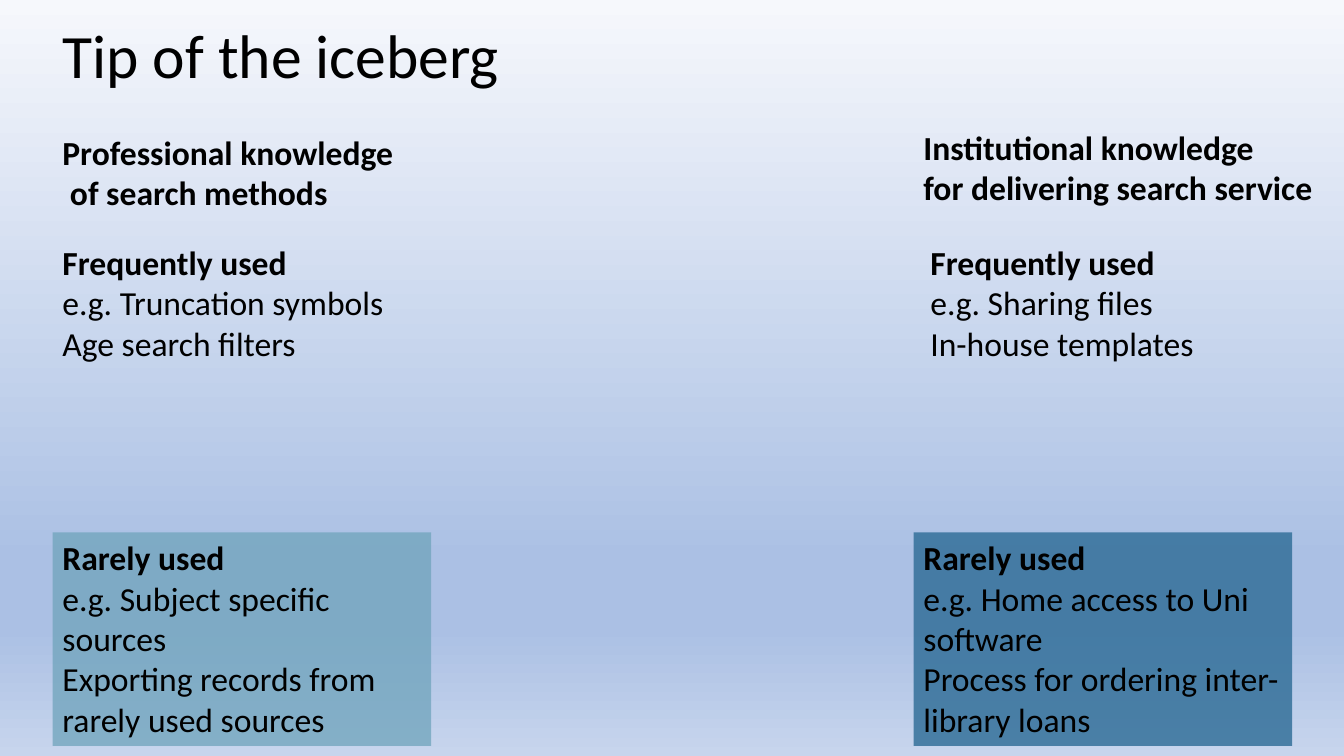
from lxml.etree import SubElement
from pptx import Presentation
from pptx.dml.color import RGBColor
from pptx.enum.shapes import MSO_SHAPE as Shape
from pptx.enum.text import MSO_ANCHOR as Anchor, PP_ALIGN as Align
from pptx.oxml.ns import qn
from pptx.util import Pt

BLACK = RGBColor(0x00, 0x00, 0x00)
TEAL = RGBColor(0x70, 0xA4, 0xBC)
DEEP_BLUE = RGBColor(0x2F, 0x6D, 0x97)
SKY = RGBColor(0xF6, 0xF8, 0xFC)
WATER = RGBColor(0xAB, 0xC0, 0xE4)
SEABED = RGBColor(0xC7, 0xD5, 0xED)

LEFT, RIGHT = 37.5, 652.5
FREQUENT_TOP, RARE_TOP = 169.25, 380.25


class SlideBuilder:
    font = "Calibri"
    title_size = 44
    body_size = 24

    def __init__(self, presentation):
        self.slide = presentation.slides.add_slide(presentation.slide_layouts[5])

    def background(self, stops):
        fill = self.slide.background.fill
        fill.gradient()
        fill.gradient_angle = 270
        stop_list = self.slide.element.find(".//" + qn("a:gsLst"))
        for stop in list(stop_list):
            stop_list.remove(stop)
        for percent, color in stops:
            stop = SubElement(stop_list, qn("a:gs"), pos=str(percent * 1000))
            SubElement(stop, qn("a:srgbClr"), val=str(color))

    def add_text_run(self, paragraph, text, size, bold=False):
        run = paragraph.add_run()
        run.text = text
        run.font.name = self.font
        run.font.size = Pt(size)
        run.font.bold = bold
        run.font.color.rgb = BLACK

    def title(self, text, left, top, width, height):
        shape = self.slide.shapes.title
        shape.left, shape.top = Pt(left), Pt(top)
        shape.width, shape.height = Pt(width), Pt(height)
        shape.text_frame.vertical_anchor = Anchor.MIDDLE
        paragraph = shape.text_frame.paragraphs[0]
        paragraph.alignment = Align.LEFT
        paragraph.line_spacing = 0.9
        self.add_text_run(paragraph, text, self.title_size)

    def add_lines(self, shape, lines, bold_lines):
        frame = shape.text_frame
        frame.word_wrap = True
        frame.vertical_anchor = Anchor.TOP
        for index, line in enumerate(lines):
            paragraph = frame.add_paragraph() if index else frame.paragraphs[0]
            paragraph.alignment = Align.LEFT
            self.add_text_run(paragraph, line, self.body_size, index < bold_lines)

    def text(self, lines, left, top, width, height, bold_lines=1):
        shape = self.slide.shapes.add_textbox(Pt(left), Pt(top), Pt(width), Pt(height))
        self.add_lines(shape, lines, bold_lines)

    def panel(self, lines, left, top, width, height, color, opacity):
        shape = self.slide.shapes.add_shape(
            Shape.RECTANGLE, Pt(left), Pt(top), Pt(width), Pt(height))
        shape.shadow.inherit = False
        shape.fill.solid()
        shape.fill.fore_color.rgb = color
        shape.line.fill.background()
        color_element = shape.element.spPr.find(".//" + qn("a:srgbClr"))
        SubElement(color_element, qn("a:alpha"), val=str(opacity * 1000))
        self.add_lines(shape, lines, 1)


def main():
    presentation = Presentation()
    presentation.slide_width, presentation.slide_height = Pt(960), Pt(540)
    builder = SlideBuilder(presentation)
    builder.background([(0, SKY), (74, WATER), (83, WATER), (100, SEABED)])
    builder.title("Tip of the iceberg", LEFT, 13.5, 828, 56)

    builder.text(["Professional knowledge", " of search methods"],
                 LEFT, 90.75, 263, 65.5, bold_lines=2)
    builder.text(["Institutional knowledge", "for delivering search service"],
                 RIGHT, 87, 297, 65.5, bold_lines=2)

    builder.text(["Frequently used", "e.g. Truncation symbols", "Age search filters"],
                 LEFT, FREQUENT_TOP, 246, 94.5)
    builder.text(["Frequently used", "e.g. Sharing files", "In-house templates"],
                 RIGHT + 5, FREQUENT_TOP, 260, 94.5)

    builder.panel(["Rarely used", "e.g. Subject specific sources",
                   "Exporting records from rarely used sources"],
                  LEFT, RARE_TOP, 270.5, 152.5, TEAL, 76)
    builder.panel(["Rarely used", "e.g. Home access to Uni software",
                   "Process for ordering inter-library loans"],
                  RIGHT, RARE_TOP, 270.5, 152.5, DEEP_BLUE, 82)
    presentation.save("out.pptx")


if __name__ == "__main__":
    main()
